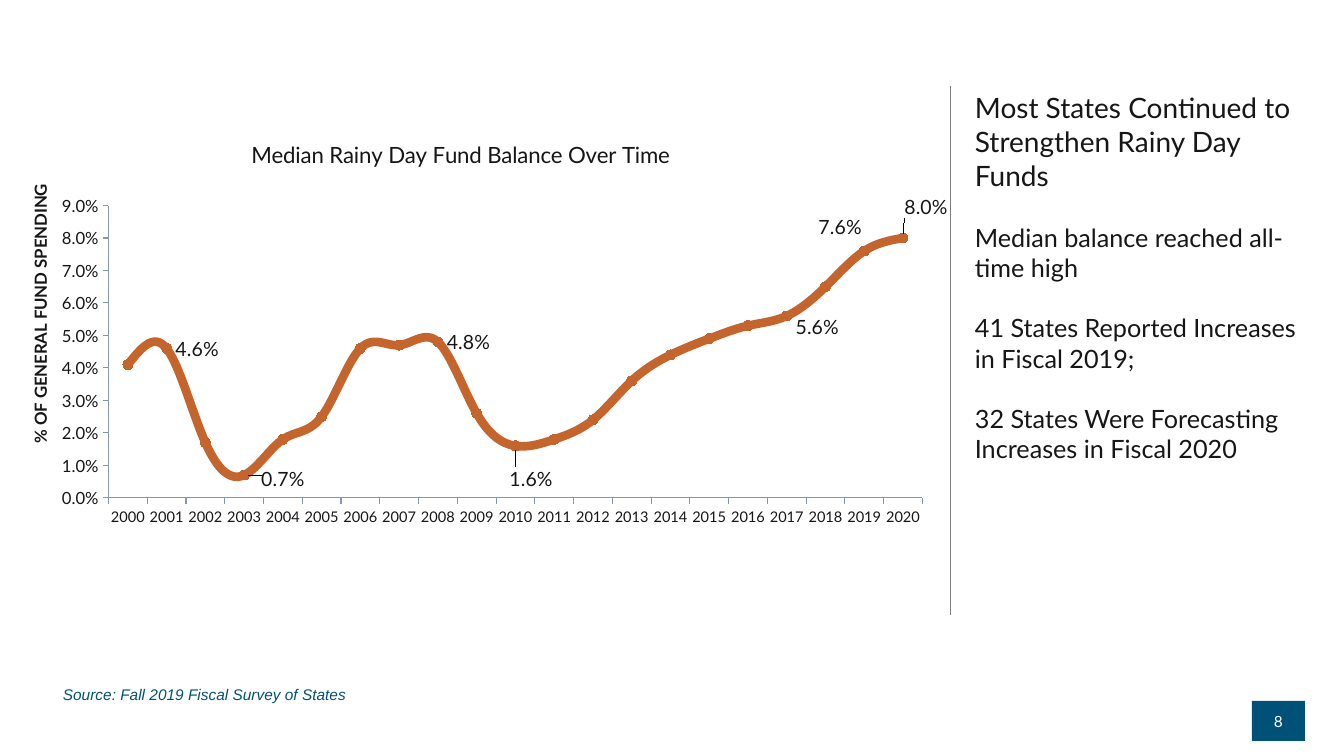
from lxml import etree
from pptx import Presentation
from pptx.chart.data import CategoryChartData
from pptx.dml.color import RGBColor
from pptx.enum.chart import XL_CHART_TYPE, XL_LABEL_POSITION, XL_MARKER_STYLE, XL_TICK_MARK
from pptx.enum.shapes import MSO_CONNECTOR, MSO_SHAPE
from pptx.enum.text import MSO_ANCHOR, PP_ALIGN
from pptx.oxml.ns import qn
from pptx.util import Pt

EMU_PER_PX = 914400 / 100.8
LINE_MARKERS = XL_CHART_TYPE.LINE_MARKERS
CIRCLE = XL_MARKER_STYLE.CIRCLE
OUTSIDE = XL_TICK_MARK.OUTSIDE
RIGHT, ABOVE, BELOW = XL_LABEL_POSITION.RIGHT, XL_LABEL_POSITION.ABOVE, XL_LABEL_POSITION.BELOW
STRAIGHT, RECTANGLE = MSO_CONNECTOR.STRAIGHT, MSO_SHAPE.RECTANGLE
MIDDLE, CENTER = MSO_ANCHOR.MIDDLE, PP_ALIGN.CENTER

INK, NAVY, ORANGE, WHITE = "161616", "005177", "C4652D", "FFFFFF"
AXIS_GREY, RULE_GREY = "8497B0", "7F7F7F"
FIRST_YEAR = 2000
BALANCES = [0.041, 0.046, 0.017, 0.007, 0.018, 0.025, 0.046, 0.047, 0.048, 0.026, 0.016,
            0.018, 0.024, 0.036, 0.044, 0.049, 0.053, 0.056, 0.065, 0.076, 0.08]
LABELS = {2001: (RIGHT, 0, 0), 2003: (RIGHT, 8, 3), 2008: (RIGHT, 0, 0),
          2010: (BELOW, 16, 12), 2017: (RIGHT, 0, 10), 2019: (ABOVE, -24, -3),
          2020: (ABOVE, 23, -10)}
MESSAGES = [("Most States Continued to Strengthen Rainy Day Funds", 20),
            ("Median balance reached all-time high", 18),
            ("41 States Reported Increases in Fiscal 2019;", 18),
            ("32 States Were Forecasting Increases in Fiscal 2020", 18)]


def px(length):
    """Turn pixels into EMU."""
    return round(length * EMU_PER_PX)


def color(value):
    """Turn a hex string into a colour."""
    return RGBColor.from_string(value)


def set_font(font, size, ink=INK, name="Lato", bold=False, italic=False):
    """Set the look of a font."""
    font.name, font.size, font.bold, font.italic = name, Pt(size), bold, italic
    font.color.rgb = color(ink)


def set_layout(parent, index, **values):
    """Place a chart part by hand, as its child at the given index."""
    for old in parent.findall(qn("c:layout")):
        parent.remove(old)
    layout = etree.Element(qn("c:layout"))
    manual = etree.SubElement(layout, qn("c:manualLayout"))
    for name, value in values.items():
        etree.SubElement(manual, qn("c:" + name)).set("val", str(value))
    parent.insert(index, layout)


def style_axis(axis, size):
    """Give an axis its line, ticks and label font."""
    axis.has_major_gridlines = False
    axis.major_tick_mark = OUTSIDE
    axis.format.line.color.rgb = color(AXIS_GREY)
    axis.format.line.width = Pt(0.75)
    set_font(axis.tick_labels.font, size)


def add_title(owner, text, size, bold, x, y):
    """Title a chart or axis at a fraction of the chart area."""
    owner.has_title = True
    title = owner.chart_title if hasattr(owner, "chart_title") else owner.axis_title
    para = title.text_frame.paragraphs[0]
    para.text = text
    set_font(para.font, size, bold=bold)
    set_layout(title._element, 1, xMode="edge", yMode="edge", x=x, y=y)


def add_balance_chart(page, left, top, width, height):
    """Draw the line chart of median balances."""
    data = CategoryChartData(number_format="0.0%")
    data.categories = [str(FIRST_YEAR + step) for step in range(len(BALANCES))]
    data.add_series("Series 1", BALANCES)
    chart = page.shapes.add_chart(
        LINE_MARKERS, px(left), px(top), px(width), px(height), data).chart
    chart.has_legend = False
    set_font(chart.font, 12)
    add_title(chart, "Median Rainy Day Fund Balance Over Time", 16, False, 0.25, 0.04)
    style_axis(chart.category_axis, 10.5)
    values = chart.value_axis
    style_axis(values, 12)
    values.minimum_scale, values.maximum_scale, values.major_unit = 0, 0.09, 0.01
    values.tick_labels.number_format = "0.0%"
    values.tick_labels.number_format_is_linked = False
    add_title(values, "% OF GENERAL FUND SPENDING", 12, True, 0.01, 0.14)
    plot = chart.plots[0]
    plot.vary_by_categories = False
    set_layout(plot._element.getparent(), 0, layoutTarget="inner", xMode="edge",
               yMode="edge", x=0.1, y=0.2, w=0.88, h=0.66)

    series = plot.series[0]
    series.smooth = True
    series.format.line.color.rgb = color(ORANGE)
    series.format.line.width = Pt(6.25)
    series.marker.style, series.marker.size = CIRCLE, 7
    series.marker.format.fill.solid()
    series.marker.format.fill.fore_color.rgb = color(ORANGE)
    series.marker.format.line.color.rgb = color(ORANGE)
    series.data_labels.show_value = False
    for year, (position, right, down) in LABELS.items():
        label = series.points[year - FIRST_YEAR].data_label
        set_font(label.font, 14)
        label.position = position
        if right or down:
            element = series.data_labels._element.findall(qn("c:dLbl"))[-1]
            set_layout(element, 1, x=round(right / width, 3), y=round(down / height, 3))


def add_message_panel(page, left, top, width, height):
    """Write the messages to the right of a vertical rule."""
    rule = page.shapes.add_connector(
        STRAIGHT, px(left), px(top + height), px(left), px(top))
    rule.line.color.rgb = color(RULE_GREY)
    rule.line.width = Pt(0.5)
    etree.SubElement(rule._element.spPr, qn("a:effectLst"))
    gap = 15
    box = page.shapes.add_textbox(px(left + gap), px(top), px(width - gap), px(height))
    frame = box.text_frame
    frame.word_wrap = True
    for index, (text, size) in enumerate(MESSAGES):
        para = frame.add_paragraph() if index else frame.paragraphs[0]
        para.text = text
        set_font(para.font, size)
        if index:
            para.space_before = Pt(21.6)


def add_source(page, left, top, width, height):
    """Write the source line."""
    frame = page.shapes.add_textbox(px(left), px(top), px(width), px(height)).text_frame
    frame.word_wrap = True
    para = frame.paragraphs[0]
    para.text = "Source: Fall 2019 Fiscal Survey of States"
    set_font(para.font, 11, NAVY, "Arial", italic=True)


def add_page_number(page, left, top, width, height):
    """Draw the page number on its block."""
    block = page.shapes.add_shape(RECTANGLE, px(left), px(top), px(width), px(height))
    block.shadow.inherit = False
    block.fill.solid()
    block.fill.fore_color.rgb = color(NAVY)
    block.line.fill.background()
    block.text_frame.vertical_anchor = MIDDLE
    para = block.text_frame.paragraphs[0]
    para.text = "8"
    para.alignment = CENTER
    set_font(para.font, 11, WHITE)


def main():
    """Build the deck."""
    deck = Presentation()
    deck.slide_width, deck.slide_height = px(1344), px(756)
    page = deck.slides.add_slide(deck.slide_layouts[6])
    add_page_number(page, 1252, 701, 53, 40)
    add_message_panel(page, 950, 86, 356, 529)
    add_balance_chart(page, 16, 117, 932, 443)
    add_source(page, 53, 680, 736, 40)
    deck.save("out.pptx")


if __name__ == "__main__":
    main()
